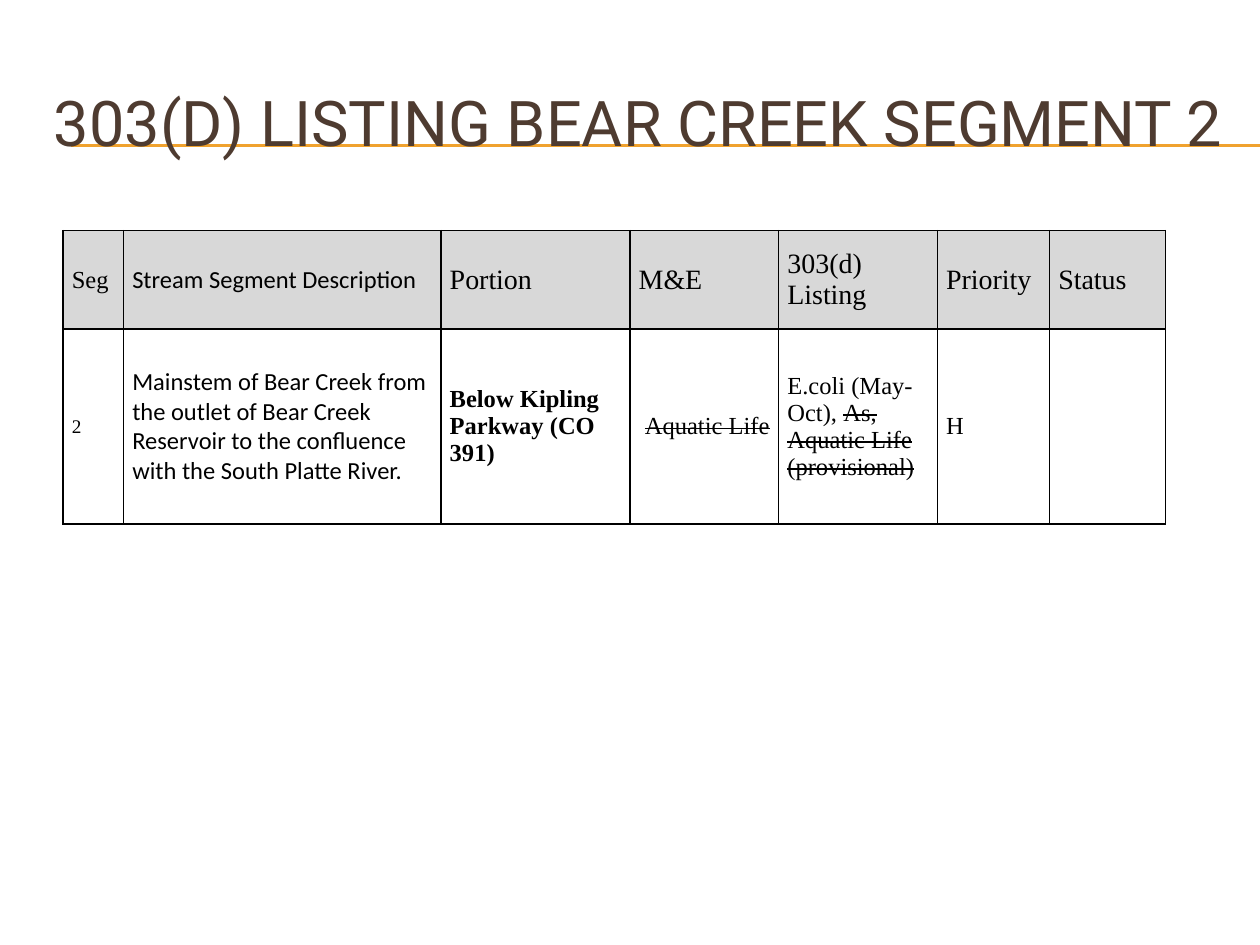
import pptx
import pptx.util
import pptx.dml.color
import pptx.enum.shapes
import pptx.enum.text
import pptx.oxml
import pptx.oxml.ns
import lxml.etree

Inches, Pt = pptx.util.Inches, pptx.util.Pt
MIDDLE = pptx.enum.text.MSO_ANCHOR.MIDDLE

COLORS = {"title": "4E3B30", "rule": "F0A22E", "head": "D8D8D8", "ink": "000000"}
SERIF, SANS = "Times New Roman", "Calibri"

TITLE = "303(D) LISTING BEAR CREEK SEGMENT 2"
RULE_YS = [1.15, 1.16]
COL_WIDTHS = [0.48, 2.52, 1.5, 1.18, 1.26, 0.89, 0.92]
ROW_HEIGHTS = [0.78, 1.55]

# text, struck text, font, size, bold
ROWS = [
    [
        ("Seg", "", SERIF, 14, False),
        ("Stream Segment Description", "", SANS, 14, False),
        ("Portion", "", SERIF, 16, False),
        ("M&E", "", SERIF, 16, False),
        ("303(d) Listing", "", SERIF, 16, False),
        ("Priority", "", SERIF, 16, False),
        ("Status", "", SERIF, 16, False),
    ],
    [
        ("2", "", SERIF, 11, False),
        ("Mainstem of Bear Creek from the outlet of Bear Creek Reservoir "
         "to the confluence with the South Platte River.", "", SANS, 14, False),
        ("Below Kipling Parkway (CO 391)", "", SERIF, 14, True),
        (" ", "Aquatic Life", SERIF, 14, False),
        ("E.coli (May-Oct), ", "As, Aquatic Life (provisional)", SERIF, 14, False),
        ("H", "", SERIF, 14, False),
        ("", "", SERIF, 14, False),
    ],
]


def rgb(name):
    return pptx.dml.color.RGBColor.from_string(COLORS[name])


def set_font(p, name, size, color, bold=False):
    p.font.name, p.font.size, p.font.bold = name, Pt(size), bold
    p.font.color.rgb = rgb(color)


def add_rule(slide, y):
    line = slide.shapes.add_connector(
        pptx.enum.shapes.MSO_CONNECTOR.STRAIGHT,
        Inches(0.56), Inches(y), Inches(10), Inches(y))
    line.line.color.rgb = rgb("rule")
    line.line.width = Pt(0.75)
    lxml.etree.SubElement(line._element.spPr, pptx.oxml.ns.qn("a:effectLst"))


def add_title(slide):
    box = slide.shapes.add_textbox(Inches(0.33), Inches(0.5), Inches(9.5), Inches(0.92))
    tf = box.text_frame
    tf.word_wrap = True
    tf.vertical_anchor = MIDDLE
    p = tf.paragraphs[0]
    p.text = TITLE
    set_font(p, "Roboto", 36, "title")


def add_borders(cell):
    tcPr = cell._tc.get_or_add_tcPr()
    for i, side in enumerate(("lnL", "lnR", "lnT", "lnB")):
        tcPr.insert(i, pptx.oxml.parse_xml(
            f'<a:{side} {pptx.oxml.ns.nsdecls("a")} w="12700"><a:solidFill>'
            f'<a:srgbClr val="{COLORS["ink"]}"/></a:solidFill></a:{side}>'))


def fill_cell(cell, is_head, text, struck, font, size, bold):
    cell.vertical_anchor = MIDDLE
    cell.margin_left = cell.margin_right = Inches(0.07)
    cell.margin_top = cell.margin_bottom = 0
    if is_head:
        cell.fill.solid()
        cell.fill.fore_color.rgb = rgb("head")
    else:
        cell.fill.background()
    add_borders(cell)
    p = cell.text_frame.paragraphs[0]
    set_font(p, font, size, "ink", bold)
    if text:
        p.add_run().text = text
    if struck:
        r = p.add_run()
        r.text = struck
        r._r.get_or_add_rPr().set("strike", "sngStrike")


def add_listing(slide):
    table = slide.shapes.add_table(
        len(ROWS), len(COL_WIDTHS), Inches(0.5), Inches(1.83),
        Inches(sum(COL_WIDTHS)), Inches(sum(ROW_HEIGHTS))).table
    table.first_row = table.horz_banding = False
    for col, width in zip(table.columns, COL_WIDTHS):
        col.width = Inches(width)
    for i, (row, height) in enumerate(zip(ROWS, ROW_HEIGHTS)):
        table.rows[i].height = Inches(height)
        for j, content in enumerate(row):
            fill_cell(table.cell(i, j), i == 0, *content)


def main():
    prs = pptx.Presentation()
    prs.slide_width, prs.slide_height = Inches(10), Inches(7.5)
    slide = prs.slides.add_slide(prs.slide_layouts[6])
    for y in RULE_YS:
        add_rule(slide, y)
    add_title(slide)
    add_listing(slide)
    prs.save("out.pptx")


if __name__ == "__main__":
    main()
